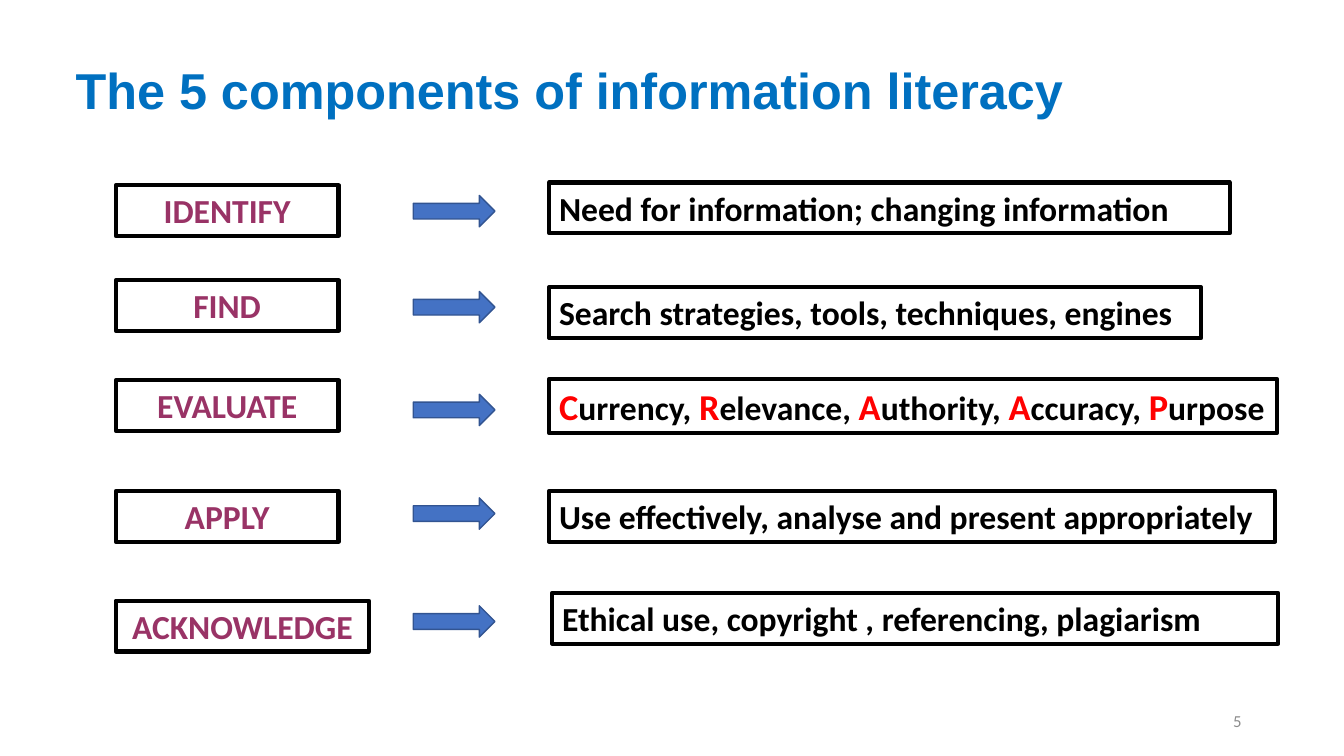
from pptx import Presentation
from pptx.dml.color import RGBColor
from pptx.enum.shapes import MSO_SHAPE as Preset
from pptx.enum.text import MSO_ANCHOR as Anchor, MSO_AUTO_SIZE as AutoSize, PP_ALIGN as Align
from pptx.util import Cm, Pt

BLACK, RED, PLUM, BLUE = "000000", "FF0000", "993366", "0070C0"
LABEL_LEFT, ARROW_LEFT = 2.92, 11.05
ARROW_WIDTH, ARROW_LENGTH = 0.79, 2.06
BOX_HEIGHT = 1.28


def color(value):
    return RGBColor.from_string(value)


def add_span(para, text, size, shade, bold=True, font="Calibri"):
    span = para.add_run()
    span.text = text
    span.font.name = font
    span.font.size = Pt(size)
    span.font.bold = bold
    span.font.color.rgb = color(shade)


def place(shape, left, top, width, height):
    shape.left, shape.top = Cm(left), Cm(top)
    shape.width, shape.height = Cm(width), Cm(height)


def add_title(page, left, top, width, height):
    title = page.shapes.title
    place(title, left, top, width, height)
    frame = title.text_frame
    frame.vertical_anchor = Anchor.TOP
    frame.auto_size = AutoSize.SHAPE_TO_FIT_TEXT
    para = frame.paragraphs[0]
    para.alignment = Align.LEFT
    add_span(para, "The 5 components of information literacy", 36, BLUE, font="Arial")


def add_page_number(page, left, top, width, height):
    box = page.shapes.add_textbox(Cm(left), Cm(top), Cm(width), Cm(height))
    frame = box.text_frame
    frame.word_wrap = True
    frame.vertical_anchor = Anchor.MIDDLE
    para = frame.paragraphs[0]
    para.alignment = Align.RIGHT
    add_span(para, "5", 12, "8C8C8C", bold=False)


def add_framed_box(page, left, top, width, height, align, spans):
    box = page.shapes.add_shape(Preset.RECTANGLE, Cm(left), Cm(top), Cm(width), Cm(height))
    box.shadow.inherit = False
    box.fill.background()
    box.line.color.rgb = color(BLACK)
    box.line.width = Pt(3)
    frame = box.text_frame
    frame.word_wrap = align == Align.LEFT
    frame.vertical_anchor = Anchor.TOP
    frame.auto_size = AutoSize.SHAPE_TO_FIT_TEXT
    para = frame.paragraphs[0]
    para.alignment = align
    for text, size, shade in spans:
        add_span(para, text, size, shade)


def add_arrow(page, left, top):
    arrow = page.shapes.add_shape(
        Preset.DOWN_ARROW, Cm(left), Cm(top), Cm(ARROW_WIDTH), Cm(ARROW_LENGTH)
    )
    arrow.rotation = 270
    arrow.shadow.inherit = False
    arrow.fill.solid()
    arrow.fill.fore_color.rgb = color("4472C4")
    arrow.line.color.rgb = color("325491")
    arrow.line.width = Pt(1)


def initial_spans(words):
    spans = []
    for position, word in enumerate(words, 1):
        ending = ", " if position < len(words) else ""
        spans += [(word[0], 26, RED), (word[1:] + ending, 24, BLACK)]
    return spans


def add_component(page, label, label_box, arrow_top, spans, detail_box):
    add_framed_box(page, *label_box, Align.CENTER, [(label, 24, PLUM)])
    add_arrow(page, ARROW_LEFT, arrow_top)
    add_framed_box(page, *detail_box, Align.LEFT, spans)


def main():
    deck = Presentation()
    deck.slide_width, deck.slide_height = Cm(33.87), Cm(19.05)
    page = deck.slides.add_slide(deck.slide_layouts[5])
    add_title(page, 1.65, 1.35, 26.6, 1.8)

    craap = ["Currency", "Relevance", "Authority", "Accuracy", "Purpose"]
    components = [
        ("IDENTIFY", 4.67, 5.61, 4.29, "Need for information; changing information",
         (13.84, 4.6, 17.15, BOX_HEIGHT)),
        ("FIND", 7.06, 5.61, 6.71, "Search strategies, tools, techniques, engines",
         (13.84, 7.24, 16.43, BOX_HEIGHT)),
        ("EVALUATE", 9.58, 5.61, 9.3, craap,
         (13.84, 9.55, 18.34, 1.37)),
        ("APPLY", 12.37, 5.61, 11.91, "Use effectively, analyse and present appropriately",
         (13.84, 12.37, 18.29, BOX_HEIGHT)),
        ("ACKNOWLEDGE", 15.14, 6.38, 14.63, "Ethical use, copyright , referencing, plagiarism",
         (13.92, 14.94, 18.29, BOX_HEIGHT)),
    ]
    for label, top, width, arrow_top, detail, detail_box in components:
        spans = initial_spans(detail) if detail is craap else [(detail, 24, BLACK)]
        label_box = (LABEL_LEFT, top, width, BOX_HEIGHT)
        add_component(page, label, label_box, arrow_top, spans, detail_box)

    add_page_number(page, 23.92, 17.65, 7.62, 1.01)
    deck.save("out.pptx")


if __name__ == "__main__":
    main()
